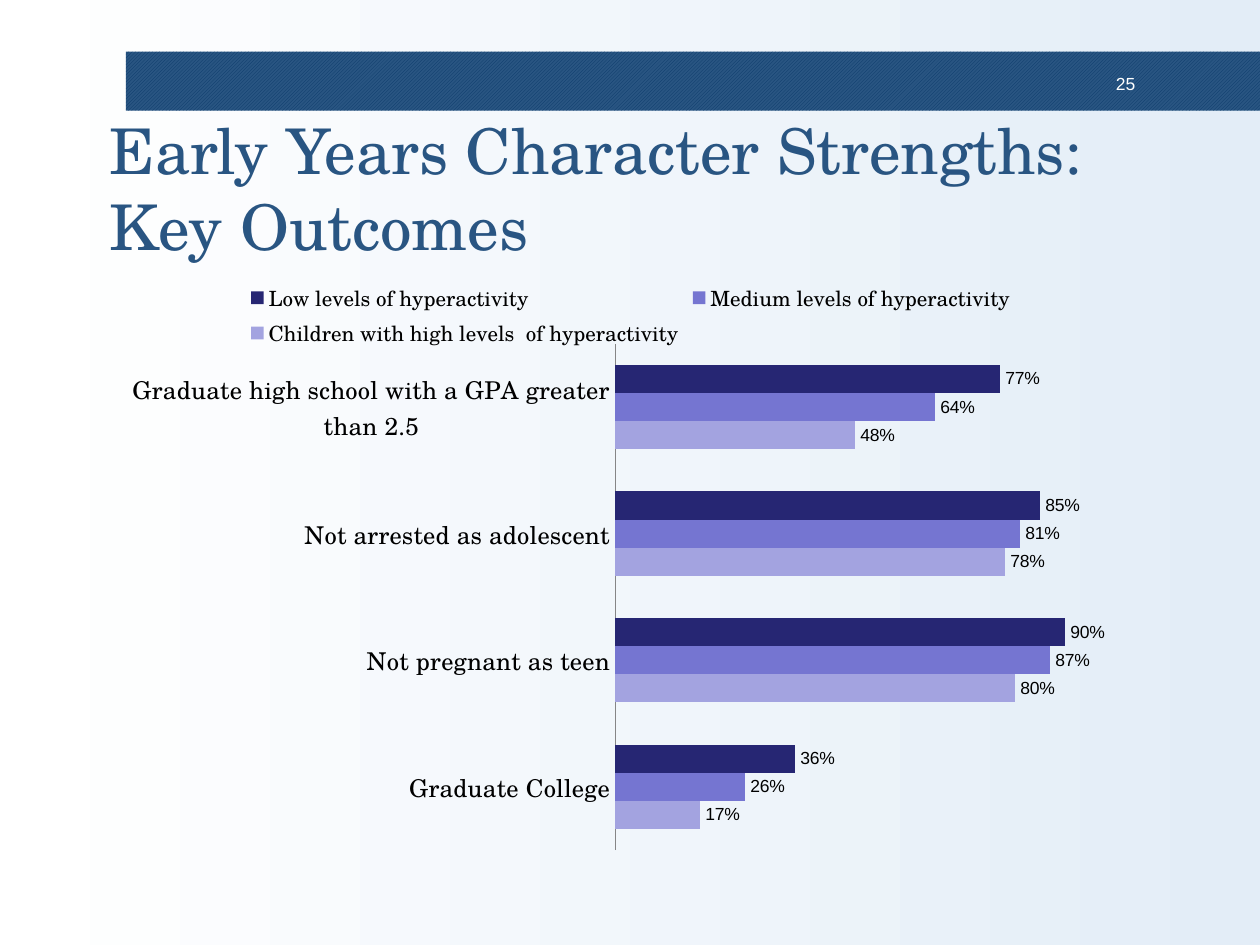
"""Build a slide with a bar chart of early years outcomes by hyperactivity."""
import pptx
import pptx.chart.data
import pptx.dml.color
import pptx.enum.chart
import pptx.enum.dml
import pptx.enum.shapes
import pptx.enum.text
import pptx.util

Pt = pptx.util.Pt
SERIF = "TeX Gyre Schola"
SANS = "Arial"
COLORS = {
    "white": "FFFFFF", "mist": "E3EDF7", "blue": "295582", "navy": "083868",
    "black": "000000", "axis": "868686",
    "high": "A3A3E0", "medium": "7575D1", "low": "262673",
}
GROUPS = ["Graduate College", "Not pregnant as teen", "Not arrested as adolescent",
          "Graduate high school with a GPA greater than 2.5"]
SERIES = [
    ("Children with high levels  of hyperactivity", "high", (0.17, 0.8, 0.78, 0.48)),
    ("Medium levels of hyperactivity", "medium", (0.26, 0.87, 0.81, 0.64)),
    ("Low levels of hyperactivity", "low", (0.36, 0.9, 0.85, 0.77)),
]


def color(name):
    return pptx.dml.color.RGBColor.from_string(COLORS[name])


def style(font, name, size, tint):
    font.name, font.size, font.bold = name, Pt(size), False
    font.color.rgb = color(tint)


def place(shape, left, top, width, height):
    shape.left, shape.top = Pt(left), Pt(top)
    shape.width, shape.height = Pt(width), Pt(height)


def inset(frame, side, edge):
    frame.margin_left = frame.margin_right = Pt(side)
    frame.margin_top = frame.margin_bottom = Pt(edge)


def paint_back(slide):
    fill = slide.background.fill
    fill.gradient()
    fill.gradient_angle = 0
    for stop, name, spot in zip(fill.gradient_stops, ("white", "mist"), (0, 1)):
        stop.color.rgb = color(name)
        stop.position = spot


def add_band(slide):
    band = slide.shapes.add_shape(pptx.enum.shapes.MSO_SHAPE.RECTANGLE,
                                  Pt(72), Pt(29.5), Pt(648), Pt(33.8))
    band.shadow.inherit = False
    band.line.fill.background()
    band.fill.patterned()
    band.fill.pattern = pptx.enum.dml.MSO_PATTERN.LIGHT_UPWARD_DIAGONAL
    band.fill.fore_color.rgb = color("navy")
    band.fill.back_color.rgb = color("blue")


def add_number(slide, text):
    box = slide.shapes.add_textbox(Pt(624.2), Pt(38.9), Pt(29.5), Pt(16.6))
    frame = box.text_frame
    frame.word_wrap = True
    inset(frame, 5, 3)
    frame.text = text
    line = frame.paragraphs[0]
    line.alignment = pptx.enum.text.PP_ALIGN.RIGHT
    style(line.font, SANS, 10, "white")


def set_title(slide, text):
    title = slide.shapes.title
    place(title, 59.8, 66.2, 579.6, 81.4)
    frame = title.text_frame
    frame.text = text
    frame.word_wrap = True
    frame.auto_size = pptx.enum.text.MSO_AUTO_SIZE.NONE
    frame.vertical_anchor = pptx.enum.text.MSO_ANCHOR.MIDDLE
    inset(frame, 3, 3)
    line = frame.paragraphs[0]
    line.alignment = pptx.enum.text.PP_ALIGN.LEFT
    style(line.font, SERIF, 36, "blue")


def set_plot(chart, left, top, width, height):
    area = chart.plots[0]._element.getparent()
    for old in area.findall(pptx.oxml.ns.qn("c:layout")):
        area.remove(old)
    parts = [("layoutTarget", "inner"), ("xMode", "edge"), ("yMode", "edge"),
             ("x", left), ("y", top), ("w", width), ("h", height)]
    rows = "".join(f'<c:{tag} val="{val}"/>' for tag, val in parts)
    area.insert(0, pptx.oxml.parse_xml(
        f'<c:layout {pptx.oxml.ns.nsdecls("c")}>'
        f'<c:manualLayout>{rows}</c:manualLayout></c:layout>'))


def set_axes(chart):
    none = pptx.enum.chart.XL_TICK_MARK.NONE
    groups, values = chart.category_axis, chart.value_axis
    groups.major_tick_mark = groups.minor_tick_mark = none
    groups.has_major_gridlines = False
    groups.format.line.color.rgb = color("axis")
    groups.format.line.width = Pt(0.75)
    style(groups.tick_labels.font, SERIF, 14, "black")
    values.minimum_scale, values.maximum_scale = 0, 1
    values.has_major_gridlines = False
    values.visible = False


def set_bars(plot):
    plot.gap_width = 150
    plot.overlap = 0
    plot.vary_by_categories = False
    for bars, (_, tint, _) in zip(plot.series, SERIES):
        bars.format.fill.solid()
        bars.format.fill.fore_color.rgb = color(tint)
        labels = bars.data_labels
        labels.show_value = True
        labels.number_format = "0%"
        labels.number_format_is_linked = False
        labels.position = pptx.enum.chart.XL_LABEL_POSITION.OUTSIDE_END
        style(labels.font, SANS, 10, "black")


def add_chart(slide):
    data = pptx.chart.data.CategoryChartData(number_format="0%")
    data.categories = GROUPS
    for name, _, values in SERIES:
        data.add_series(name, values)
    chart = slide.shapes.add_chart(
        pptx.enum.chart.XL_CHART_TYPE.BAR_CLUSTERED,
        Pt(70.6), Pt(153.4), Pt(579.6), Pt(344.9), data).chart
    style(chart.font, SANS, 10, "black")
    chart.has_title = False
    chart.has_legend = True
    chart.legend.position = pptx.enum.chart.XL_LEGEND_POSITION.TOP
    chart.legend.include_in_layout = False
    style(chart.legend.font, SERIF, 12, "black")
    set_axes(chart)
    set_bars(chart.plots[0])
    set_plot(chart, 0.485, 0.125, 0.493, 0.839)


def main():
    deck = pptx.Presentation()
    deck.slide_width, deck.slide_height = Pt(720), Pt(540)
    slide = deck.slides.add_slide(deck.slide_layouts[5])
    paint_back(slide)
    add_band(slide)
    add_number(slide, "25")
    set_title(slide, "Early Years Character Strengths: Key Outcomes")
    add_chart(slide)
    deck.save("out.pptx")


if __name__ == "__main__":
    main()
